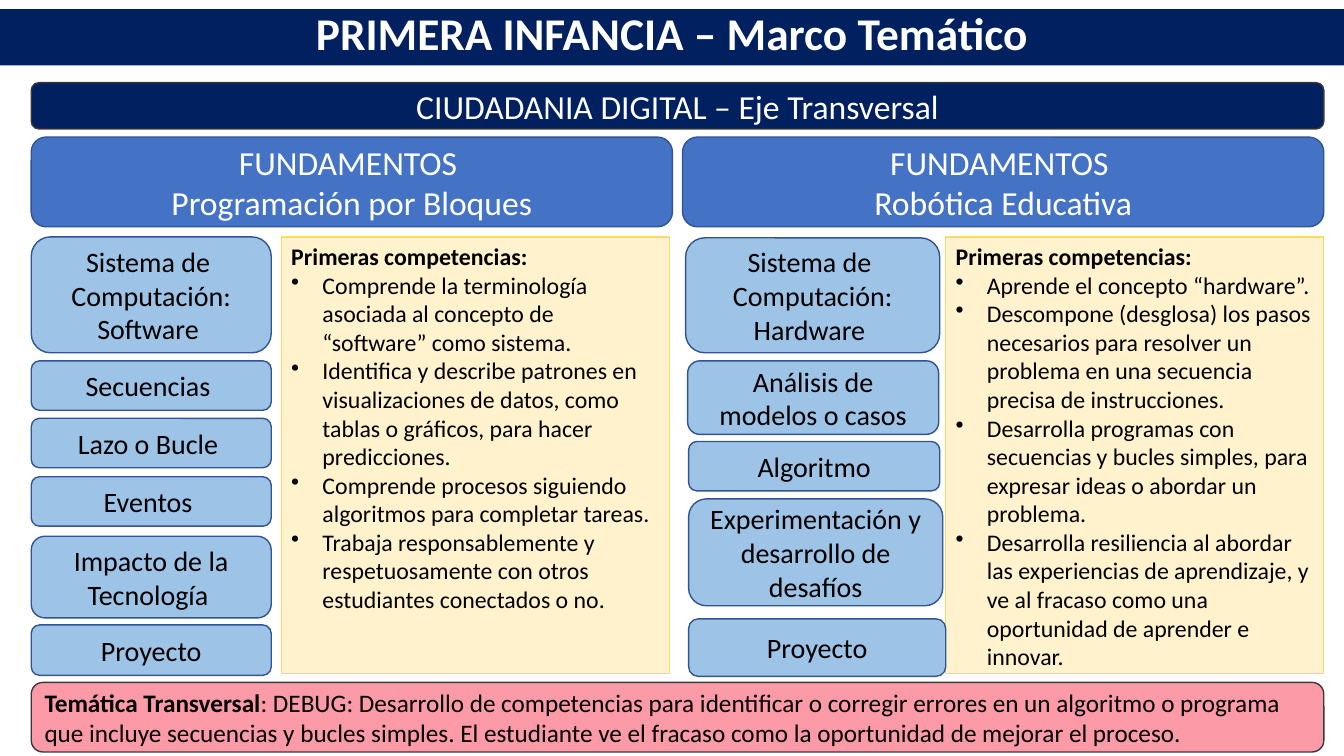
import pptx
import pptx.dml.color
import pptx.enum.shapes
import pptx.enum.text
import pptx.oxml.ns
import pptx.util
import lxml.etree

EMU_PER_PX = 9144  # 100 px to the inch
WIDTH, HEIGHT = 1333, 750
LEFT, FULL = 31, 1282
NAVY, BLUE, SKY, CREAM, PINK = "002060", "4472C4", "9DC3E6", "FFF2CC", "FC9AA8"
BLUE_EDGE, GOLD_EDGE, DARK_EDGE = "325491", "FFD966", "3B3838"
BLACK, WHITE = "000000", "FFFFFF"

# Each column: heading, topics (left, top, width, height, text), competencies.
COLUMNS = [
    {
        "heading": (LEFT, "Programación por Bloques"),
        "topics": [
            (31, 235, 238, 115, "Sistema de \nComputación: Software "),
            (31, 358, 238, 49, "Secuencias "),
            (31, 415, 238, 49, "Lazo o Bucle "),
            (31, 473, 238, 49, "Eventos "),
            (31, 532, 238, 81, "Impacto de la Tecnología "),
            (31, 620, 238, 50, "Proyecto"),
        ],
        "panel": (279, 385),
        "skills": [
            "Comprende la terminología asociada al concepto de “software” como sistema.",
            "Identifica y describe patrones en visualizaciones de datos, como tablas o "
            "gráficos, para hacer predicciones.",
            "Comprende procesos siguiendo algoritmos para completar tareas.",
            "Trabaja responsablemente y respetuosamente con otros estudiantes "
            "conectados o no.",
        ],
    },
    {
        "heading": (677, "Robótica Educativa"),
        "topics": [
            (680, 236, 252, 114, "Sistema de \nComputación: Hardware "),
            (682, 358, 249, 73, "Análisis de modelos o casos"),
            (683, 438, 249, 49, "Algoritmo"),
            (683, 495, 252, 106, "Experimentación y desarrollo de desafíos"),
            (683, 614, 255, 57, "Proyecto"),
        ],
        "panel": (938, 375),
        "skills": [
            "Aprende el concepto “hardware”.",
            "Descompone (desglosa) los pasos necesarios para resolver un problema en "
            "una secuencia precisa de instrucciones.",
            "Desarrolla programas con secuencias y bucles simples, para expresar ideas "
            "o abordar un problema.",
            "Desarrolla resiliencia al abordar las experiencias de aprendizaje, y ve al "
            "fracaso como una oportunidad de aprender e innovar.",
        ],
    },
]


def px(length):
    return pptx.util.Emu(length * EMU_PER_PX)


def color(hex_code):
    return pptx.dml.color.RGBColor.from_string(hex_code)


def add_span(para, text, size=20, ink=BLACK, bold=False):
    span = para.add_run()
    span.text = text
    span.font.name = "Calibri"
    span.font.size = pptx.util.Pt(size)
    span.font.bold = bold
    span.font.color.rgb = color(ink)


def add_bullet(para, indent=31):
    properties = para._p.get_or_add_pPr()
    properties.set("marL", str(px(indent)))
    properties.set("indent", str(px(-indent)))
    bullet = lxml.etree.SubElement(properties, pptx.oxml.ns.qn("a:buChar"))
    bullet.set("char", "•")


class ThemeSlide:
    def __init__(self, deck):
        self.slide = deck.slides.add_slide(deck.slide_layouts[6])

    def box(self, left, top, width, height, fill, edge=None, rounded=True, anchor="MIDDLE"):
        """Draw a filled shape and return its text frame."""
        kinds = pptx.enum.shapes.MSO_SHAPE
        kind = kinds.ROUNDED_RECTANGLE if rounded else kinds.RECTANGLE
        shape = self.slide.shapes.add_shape(kind, px(left), px(top), px(width), px(height))
        shape.shadow.inherit = False
        shape.fill.solid()
        shape.fill.fore_color.rgb = color(fill)
        if edge:
            shape.line.color.rgb = color(edge)
            shape.line.width = pptx.util.Pt(1)
        else:
            shape.line.fill.background()
        frame = shape.text_frame
        frame.word_wrap = True
        frame.vertical_anchor = pptx.enum.text.MSO_ANCHOR[anchor]
        return frame

    def paragraph(self, frame, first=False, align="LEFT"):
        para = frame.paragraphs[0] if first else frame.add_paragraph()
        para.alignment = pptx.enum.text.PP_ALIGN[align]
        return para

    def label(self, place, text, fill, edge=None, rounded=True, spacing=None, **style):
        """Draw a box with centred text, one paragraph per line of text."""
        frame = self.box(*place, fill, edge, rounded)
        for index, line in enumerate(text.split("\n")):
            para = self.paragraph(frame, index == 0, "CENTER")
            para.line_spacing = spacing
            add_span(para, line, **style)

    def skills(self, left, width, items):
        frame = self.box(left, 235, width, 433, CREAM, GOLD_EDGE, False, "TOP")
        add_span(self.paragraph(frame, True), "Primeras competencias:", size=17, bold=True)
        for item in items:
            para = self.paragraph(frame)
            add_bullet(para)
            add_span(para, item, size=17)

    def footer(self, lead, text):
        frame = self.box(LEFT, 677, FULL, 69, PINK, DARK_EDGE)
        para = self.paragraph(frame, True)
        add_span(para, lead, size=18, bold=True)
        add_span(para, text, size=18)


def main():
    deck = pptx.Presentation()
    deck.slide_width, deck.slide_height = px(WIDTH), px(HEIGHT)
    page = ThemeSlide(deck)
    page.label((0, 9, WIDTH, 56), "PRIMERA INFANCIA – Marco Temático", NAVY,
               rounded=False, spacing=0.8, size=32.4, ink=WHITE, bold=True)
    page.label((LEFT, 82, FULL, 46), "CIUDADANIA DIGITAL – Eje Transversal", NAVY,
               DARK_EDGE, size=24, ink=WHITE)
    for column in COLUMNS:
        left, subject = column["heading"]
        page.label((left, 136, 636, 89), f"FUNDAMENTOS \n{subject}", BLUE, BLUE_EDGE,
                   size=24, ink=WHITE)
        page.skills(*column["panel"], column["skills"])
        for *place, topic in column["topics"]:
            page.label(place, topic, SKY, BLUE_EDGE)
    page.footer(
        "Temática Transversal",
        ": DEBUG: Desarrollo de competencias para identificar o corregir errores en un "
        "algoritmo o programa que incluye secuencias y bucles simples. El estudiante ve "
        "el fracaso como la oportunidad de mejorar el proceso.")
    deck.save("out.pptx")


if __name__ == "__main__":
    main()
